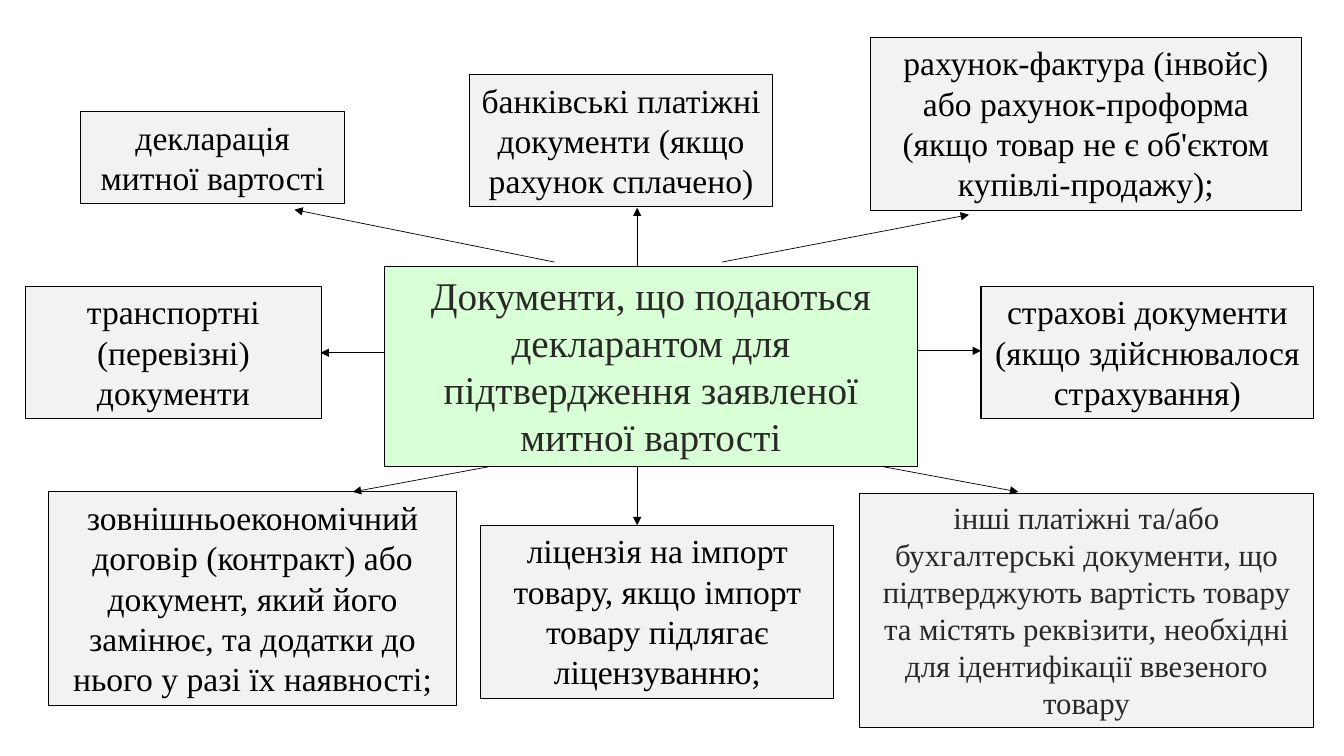
from dataclasses import dataclass

from lxml import etree
from pptx import Presentation
from pptx.dml.color import RGBColor
from pptx.enum import shapes, text
from pptx.oxml import ns
from pptx.util import Inches, Pt


@dataclass(frozen=True)
class Theme:
    font: str = "Times New Roman"
    ink: str = "000000"
    soft_ink: str = "2A2928"
    hub_fill: str = "D8FFD5"
    document_fill: str = "F2F2F2"
    hub_size: int = 28
    document_size: int = 24
    small_size: int = 22
    border: float = 0.75
    arrow: float = 0.5


THEME = Theme()

HUB_BOX = (3.81, 2.64, 5.29, 1.99)
HUB_TEXT = "Документи, що подаються декларантом для підтвердження заявленої митної вартості"

# Box (left, top, width, height), paragraphs, text size, text colour
DOCUMENTS = [
    ((4.77, 5.21, 3.5, 1.72),
     ["ліцензія на імпорт товару, якщо імпорт товару підлягає ліцензуванню;"],
     THEME.document_size, THEME.ink),
    ((0.8, 1.11, 2.62, 0.91), ["декларація митної вартості"],
     THEME.document_size, THEME.ink),
    ((0.48, 4.88, 4.05, 2.12),
     ["зовнішньоекономічний договір (контракт) або документ, який його замінює, "
      "та додатки до нього у разі їх наявності;"],
     THEME.document_size, THEME.ink),
    ((8.63, 0.37, 4.28, 1.72),
     ["рахунок-фактура (інвойс) або рахунок-проформа "
      "(якщо товар не є об'єктом купівлі-продажу);"],
     THEME.document_size, THEME.ink),
    ((4.66, 0.74, 3, 1.31), ["банківські платіжні документи (якщо рахунок сплачено)"],
     THEME.document_size, THEME.ink),
    ((0.25, 2.84, 2.94, 1.31), ["транспортні (перевізні) документи"],
     THEME.document_size, THEME.ink),
    ((9.73, 2.84, 3.3, 1.31), ["страхові документи", "(якщо здійснювалося страхування)"],
     THEME.document_size, THEME.ink),
    ((8.52, 4.9, 4.51, 2.32),
     ["інші платіжні та/або бухгалтерські документи, що підтверджують вартість товару "
      "та містять реквізити, необхідні для ідентифікації ввезеного товару"],
     THEME.small_size, THEME.soft_ink),
]


def fill_box(panel, box, fill, paragraphs, size, ink):
    """Place a bordered panel and write its centred text."""
    panel.left, panel.top, panel.width, panel.height = map(Inches, box)
    panel.fill.solid()
    panel.fill.fore_color.rgb = RGBColor.from_string(fill)
    panel.line.color.rgb = RGBColor.from_string(THEME.ink)
    panel.line.width = Pt(THEME.border)
    frame = panel.text_frame
    frame.word_wrap = True
    frame.auto_size = text.MSO_AUTO_SIZE.SHAPE_TO_FIT_TEXT
    frame.vertical_anchor = text.MSO_ANCHOR.TOP
    for index, wording in enumerate(paragraphs):
        paragraph = frame.add_paragraph() if index else frame.paragraphs[0]
        paragraph.alignment = text.PP_ALIGN.CENTER
        run = paragraph.add_run()
        run.text = wording
        run.font.name = THEME.font
        run.font.size = Pt(size)
        run.font.color.rgb = RGBColor.from_string(ink)


def add_hub(slide, box):
    fill_box(slide.shapes.title, box, THEME.hub_fill, [HUB_TEXT],
             THEME.hub_size, THEME.soft_ink)


def add_documents(slide):
    for box, paragraphs, size, ink in DOCUMENTS:
        panel = slide.shapes.add_shape(shapes.MSO_SHAPE.RECTANGLE, *map(Inches, box))
        panel.shadow.inherit = False
        fill_box(panel, box, THEME.document_fill, paragraphs, size, ink)


def add_arrow(slide, start, end):
    arrow = slide.shapes.add_connector(
        shapes.MSO_CONNECTOR.STRAIGHT, *map(Inches, (*start, *end)))
    arrow.line.color.rgb = RGBColor.from_string(THEME.ink)
    arrow.line.width = Pt(THEME.arrow)
    etree.SubElement(arrow.line._get_or_add_ln(), ns.qn("a:tailEnd"), type="triangle")
    etree.SubElement(arrow._element.spPr, ns.qn("a:effectLst"))


def add_arrows(slide, hub):
    """Draw the arrows from the edges of the hub out to the documents."""
    left, top, width, height = hub
    right, bottom = left + width, top + height
    axis = 6.32
    gap = 0.04
    arrows = [
        ((7.16, top - gap), (9.61, 2.13)),
        ((5.5, top - gap), (2.92, 2.08)),
        ((axis, top), (axis, 2.06)),
        ((axis, bottom), (axis, 5.21)),
        ((4.85, bottom), (3.5, 4.88)),
        ((left, 3.5), (3.18, 3.5)),
        ((right, 3.48), (9.73, 3.48)),
        ((8.76, bottom), (10.1, 4.88)),
    ]
    for start, end in arrows:
        add_arrow(slide, start, end)


def main():
    deck = Presentation()
    deck.slide_width, deck.slide_height = Inches(13.33), Inches(7.5)
    slide = deck.slides.add_slide(deck.slide_layouts.get_by_name("Title Only"))
    add_hub(slide, HUB_BOX)
    add_documents(slide)
    add_arrows(slide, HUB_BOX)
    deck.save("out.pptx")


if __name__ == "__main__":
    main()
